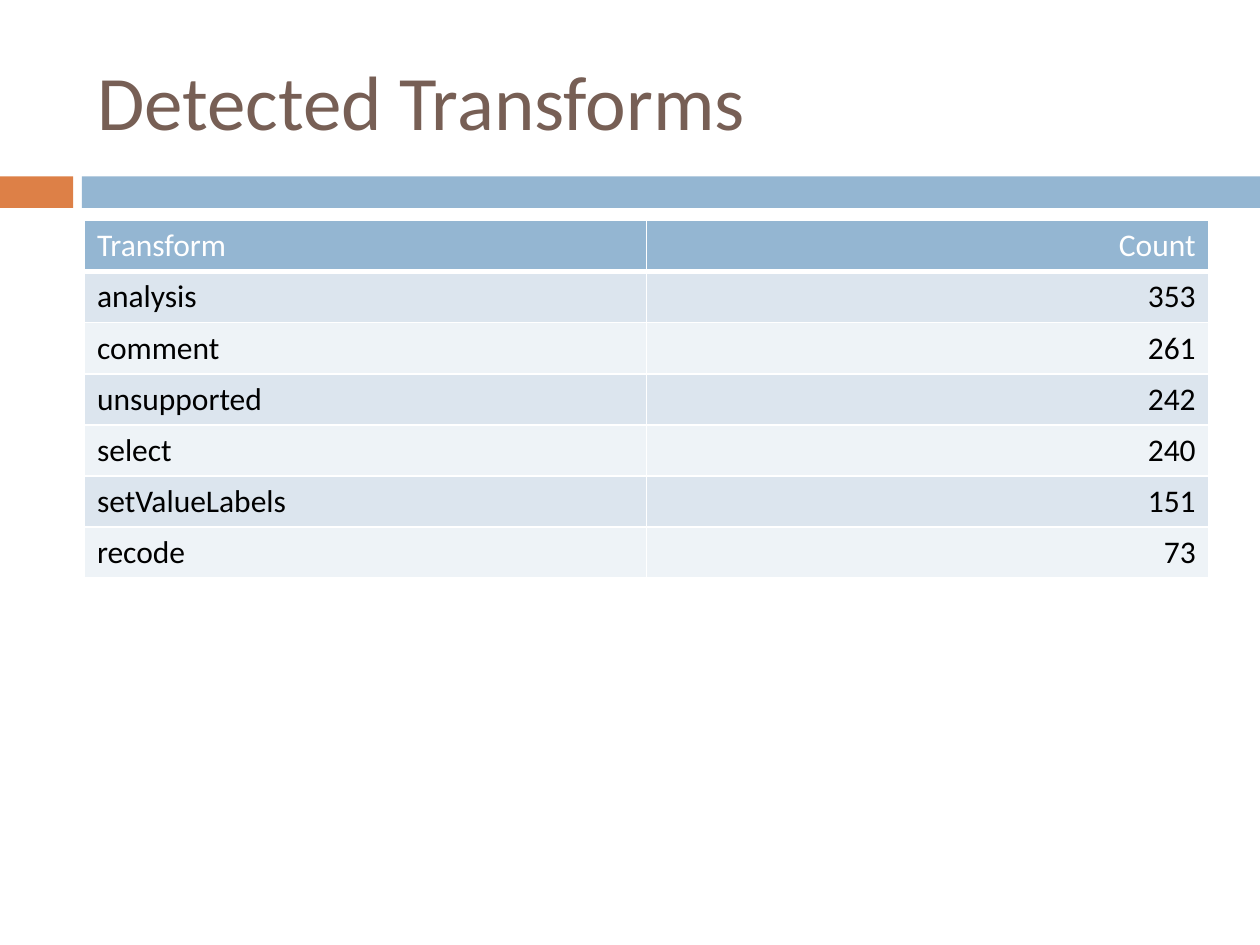
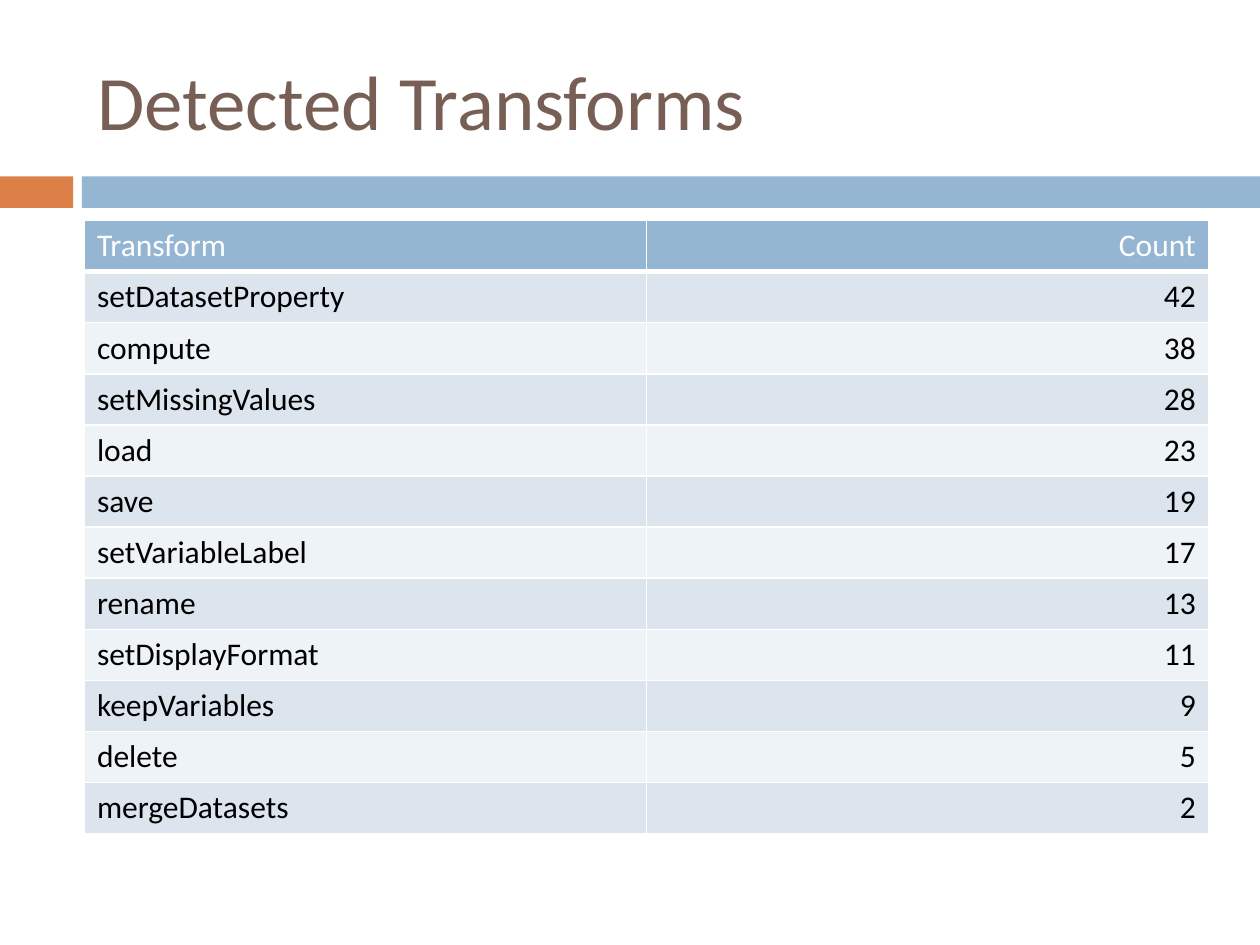
from lxml import etree
from pptx import Presentation
from pptx.dml.color import RGBColor
from pptx.enum.shapes import MSO_SHAPE
from pptx.enum.text import MSO_ANCHOR, MSO_AUTO_SIZE, PP_ALIGN
from pptx.oxml.ns import qn
from pptx.util import Inches, Pt

# Content
TITLE = "Detected Transforms"
HEADER = ("Transform", "Count")
TRANSFORM_COUNTS = [
    [("analysis", 353), ("comment", 261), ("unsupported", 242),
     ("select", 240), ("setValueLabels", 151), ("recode", 73)],
    [("setDatasetProperty", 42), ("compute", 38), ("setMissingValues", 28),
     ("load", 23), ("save", 19), ("setVariableLabel", 17), ("rename", 13),
     ("setDisplayFormat", 11), ("keepVariables", 9), ("delete", 5),
     ("mergeDatasets", 2)],
]

# Shared style
FONT = "Calibri"
BROWN, ORANGE, BLUE = "775F55", "DD8047", "94B6D2"
WHITE, BLACK = "FFFFFF", "000000"
ROW_FILLS = ("EEF3F7", "DCE5EE")  # even rows, odd rows
LEFT, RIGHT = PP_ALIGN.LEFT, PP_ALIGN.RIGHT
MIDDLE = MSO_ANCHOR.MIDDLE
RECTANGLE = MSO_SHAPE.RECTANGLE
NO_AUTOFIT = MSO_AUTO_SIZE.NONE

# Layout, in inches
SLIDE_W, SLIDE_H = 10, 7.5
MARGIN, CONTENT_W = 0.67, 8.92
TITLE_TOP, TITLE_H = 0.25, 1.08
BAND_TOP, BAND_H = 1.4, 0.25
BANDS = [(0, 0.58, ORANGE), (0.65, SLIDE_W - 0.65, BLUE)]  # left, width, colour
TABLE_TOP, ROW_H = 1.75, 0.4


def rgb(value):
    return RGBColor.from_string(value)


def style_text(frame, size, colour, align):
    paragraph = frame.paragraphs[0]
    paragraph.alignment = align
    font = paragraph.runs[0].font
    font.name, font.size, font.bold = FONT, Pt(size), False
    font.color.rgb = rgb(colour)


def add_title(slide):
    title = slide.shapes.title
    title.left, title.top = Inches(MARGIN), Inches(TITLE_TOP)
    title.width, title.height = Inches(CONTENT_W), Inches(TITLE_H)
    frame = title.text_frame
    frame.text = TITLE
    frame.auto_size = NO_AUTOFIT
    frame.vertical_anchor = MIDDLE
    style_text(frame, 44, BROWN, LEFT)


def add_bands(slide):
    for left, width, colour in BANDS:
        band = slide.shapes.add_shape(RECTANGLE, Inches(left), Inches(BAND_TOP),
                                      Inches(width), Inches(BAND_H))
        band.shadow.inherit = False
        band.fill.solid()
        band.fill.fore_color.rgb = rgb(colour)
        band.line.fill.background()


def add_borders(cell, bottom_width):
    properties = cell._tc.get_or_add_tcPr()
    for side, width in (("L", 1), ("R", 1), ("T", 1), ("B", bottom_width)):
        line = etree.SubElement(properties, qn(f"a:ln{side}"), w=str(Pt(width)))
        fill = etree.SubElement(line, qn("a:solidFill"))
        etree.SubElement(fill, qn("a:srgbClr"), val=WHITE)


def add_count_table(slide, counts):
    rows = [HEADER, *counts]
    table = slide.shapes.add_table(
        len(rows), len(HEADER), Inches(MARGIN), Inches(TABLE_TOP),
        Inches(CONTENT_W), Inches(ROW_H * len(rows))).table
    for r, row in enumerate(rows):
        is_header = r == 0
        for c, value in enumerate(row):
            cell = table.cell(r, c)
            cell.text = str(value)
            style_text(cell.text_frame, 18, WHITE if is_header else BLACK,
                       RIGHT if c else LEFT)
            add_borders(cell, 3 if is_header else 1)
            cell.fill.solid()
            cell.fill.fore_color.rgb = rgb(BLUE if is_header else ROW_FILLS[r % 2])


def main():
    deck = Presentation()
    deck.slide_width, deck.slide_height = Inches(SLIDE_W), Inches(SLIDE_H)
    title_only = deck.slide_layouts.get_by_name("Title Only")
    for counts in TRANSFORM_COUNTS:
        slide = deck.slides.add_slide(title_only)
        add_bands(slide)
        add_title(slide)
        add_count_table(slide, counts)
    deck.save("out.pptx")


if __name__ == "__main__":
    main()
